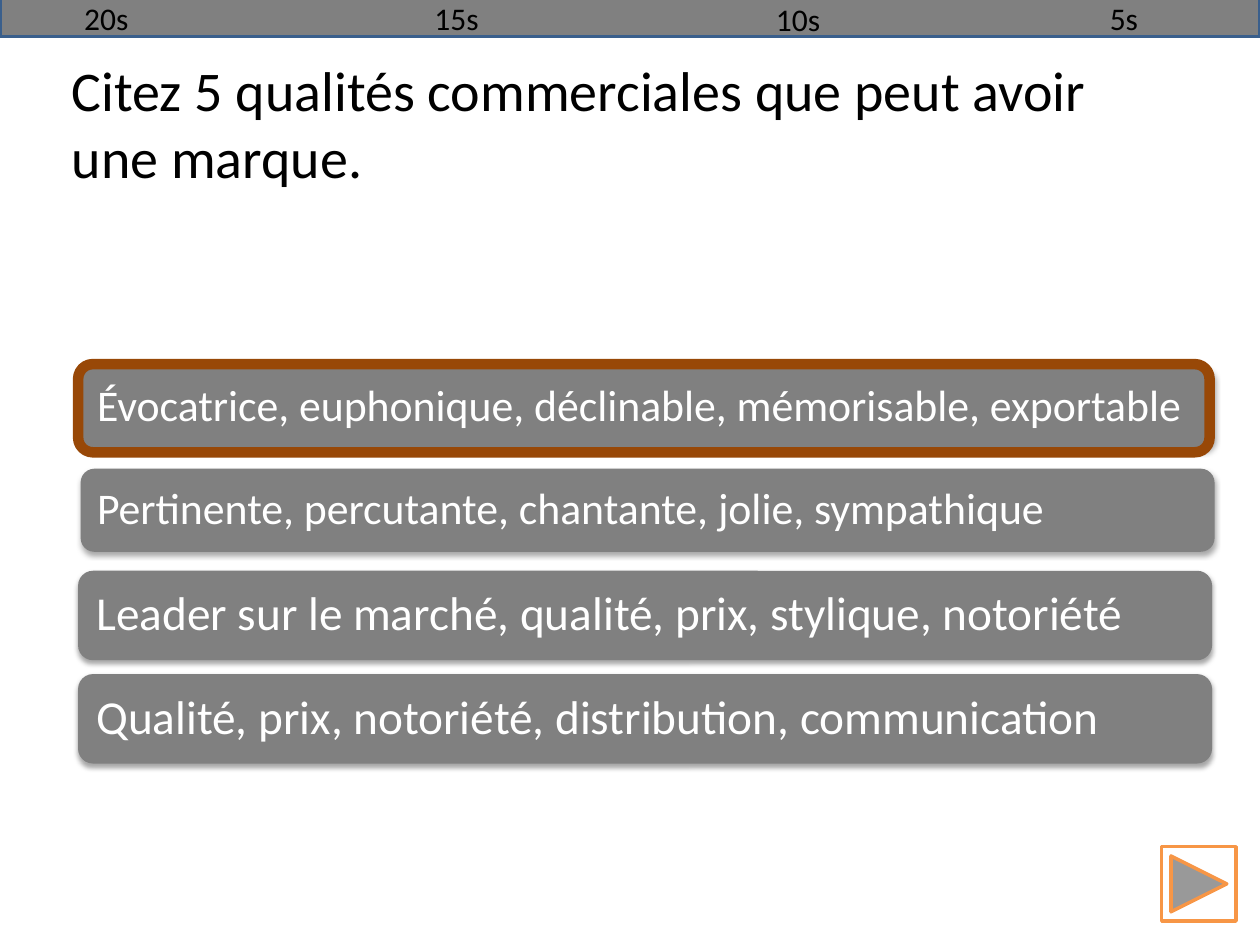
from dataclasses import dataclass

from lxml import etree
from pptx import Presentation
from pptx.dml.color import RGBColor
from pptx.enum.shapes import MSO_SHAPE
from pptx.enum.text import MSO_ANCHOR, MSO_AUTO_SIZE, PP_ALIGN
from pptx.oxml.ns import qn
from pptx.util import Inches, Pt

ROUNDED = MSO_SHAPE.ROUNDED_RECTANGLE
RECTANGLE = MSO_SHAPE.RECTANGLE
BACK_BUTTON = MSO_SHAPE.ACTION_BUTTON_BACK_OR_PREVIOUS
TOP = MSO_ANCHOR.TOP
MIDDLE = MSO_ANCHOR.MIDDLE
LEFT = PP_ALIGN.LEFT
FIXED_SIZE = MSO_AUTO_SIZE.NONE

FONT = "Calibri"
BLACK = "000000"
WHITE = "FFFFFF"
GREY = "808080"
BROWN = "984807"
ORANGE = "F79646"
BLUE = "3A5F8C"


@dataclass
class Box:
    left: float
    top: float
    width: float
    height: float

    def lengths(self):
        return [Inches(v) for v in (self.left, self.top, self.width, self.height)]


@dataclass
class Answer:
    text: str
    box: Box
    size: float
    inset: float


@dataclass
class TimeMark:
    text: str
    box: Box


def colour(value: str) -> RGBColor:
    return RGBColor.from_string(value)


def write(frame, text: str, size: float, ink: str):
    paragraph = frame.paragraphs[0]
    paragraph.alignment = LEFT
    run = paragraph.add_run()
    run.text = text
    run.font.name = FONT
    run.font.size = Pt(size)
    run.font.color.rgb = colour(ink)
    return paragraph


def draw_shape(slide, kind, box: Box, fill: str = "", line: str = "", weight: float = 0):
    shape = slide.shapes.add_shape(kind, *box.lengths())
    shape.shadow.inherit = False
    if fill:
        shape.fill.solid()
        shape.fill.fore_color.rgb = colour(fill)
    else:
        shape.fill.background()
    if line:
        shape.line.color.rgb = colour(line)
        shape.line.width = Pt(weight)
    else:
        shape.line.fill.background()
    return shape


def cast_shadow(shape) -> None:
    effects = shape.element.spPr.find(qn("a:effectLst"))
    shadow = etree.SubElement(
        effects, qn("a:outerShdw"),
        blurRad=str(Pt(3.1)), dist=str(Pt(1.8)), dir="5400000", rotWithShape="0",
    )
    ink = etree.SubElement(shadow, qn("a:srgbClr"), val=BLACK)
    etree.SubElement(ink, qn("a:alpha"), val="35000")


def draw_question(slide, text: str, box: Box) -> None:
    question = slide.shapes.title
    question.left, question.top, question.width, question.height = box.lengths()
    frame = question.text_frame
    frame.word_wrap = True
    frame.auto_size = FIXED_SIZE
    frame.vertical_anchor = TOP
    write(frame, text, 32, BLACK)


def draw_answer(slide, answer: Answer) -> None:
    panel = draw_shape(slide, ROUNDED, answer.box, GREY)
    cast_shadow(panel)
    frame = panel.text_frame
    frame.word_wrap = True
    frame.vertical_anchor = MIDDLE
    inset = Inches(answer.inset)
    frame.margin_left = frame.margin_right = inset
    frame.margin_top = frame.margin_bottom = inset
    write(frame, answer.text, answer.size, WHITE).line_spacing = 0.9


def draw_time_mark(slide, mark: TimeMark) -> None:
    label = slide.shapes.add_textbox(*mark.box.lengths())
    label.text_frame.word_wrap = True
    write(label.text_frame, mark.text, 18, BLACK)


QUESTION = "Citez 5 qualités commerciales que peut avoir une marque."

ANSWERS = [
    Answer("Évocatrice, euphonique, déclinable, mémorisable, exportable",
           Box(0.64, 2.9, 9, 0.66), 25, 0.1),
    Answer("Pertinente, percutante, chantante, jolie, sympathique",
           Box(0.64, 3.72, 9, 0.66), 25, 0.1),
    Answer("Leader sur le marché, qualité, prix, stylique, notoriété",
           Box(0.62, 4.53, 9, 0.71), 27, 0.11),
    Answer("Qualité, prix, notoriété, distribution, communication",
           Box(0.62, 5.35, 9, 0.71), 27, 0.11),
]

TIME_MARKS = [
    TimeMark("5s", Box(8.71, -0.06, 0.47, 0.4)),
    TimeMark("10s", Box(6.06, -0.05, 0.63, 0.4)),
    TimeMark("15s", Box(3.35, -0.06, 0.63, 0.4)),
    TimeMark("20s", Box(0.57, -0.06, 0.63, 0.4)),
]


def main() -> None:
    deck = Presentation()
    deck.slide_width = Inches(10)
    deck.slide_height = Inches(7.5)
    slide = deck.slides.add_slide(deck.slide_layouts[5])

    draw_question(slide, QUESTION, Box(0.47, 0.39, 9, 1.22))
    for answer in ANSWERS:
        draw_answer(slide, answer)
    draw_shape(slide, ROUNDED, Box(0.62, 2.89, 8.98, 0.7), line=BROWN, weight=6)

    next_button = draw_shape(
        slide, BACK_BUTTON, Box(9.22, 6.72, 0.59, 0.59), WHITE, ORANGE, 2)
    next_button.rotation = 180

    draw_shape(slide, RECTANGLE, Box(0, -0.02, 10, 0.31), GREY, BLUE, 2)
    for mark in TIME_MARKS:
        draw_time_mark(slide, mark)

    deck.save("out.pptx")


if __name__ == "__main__":
    main()
